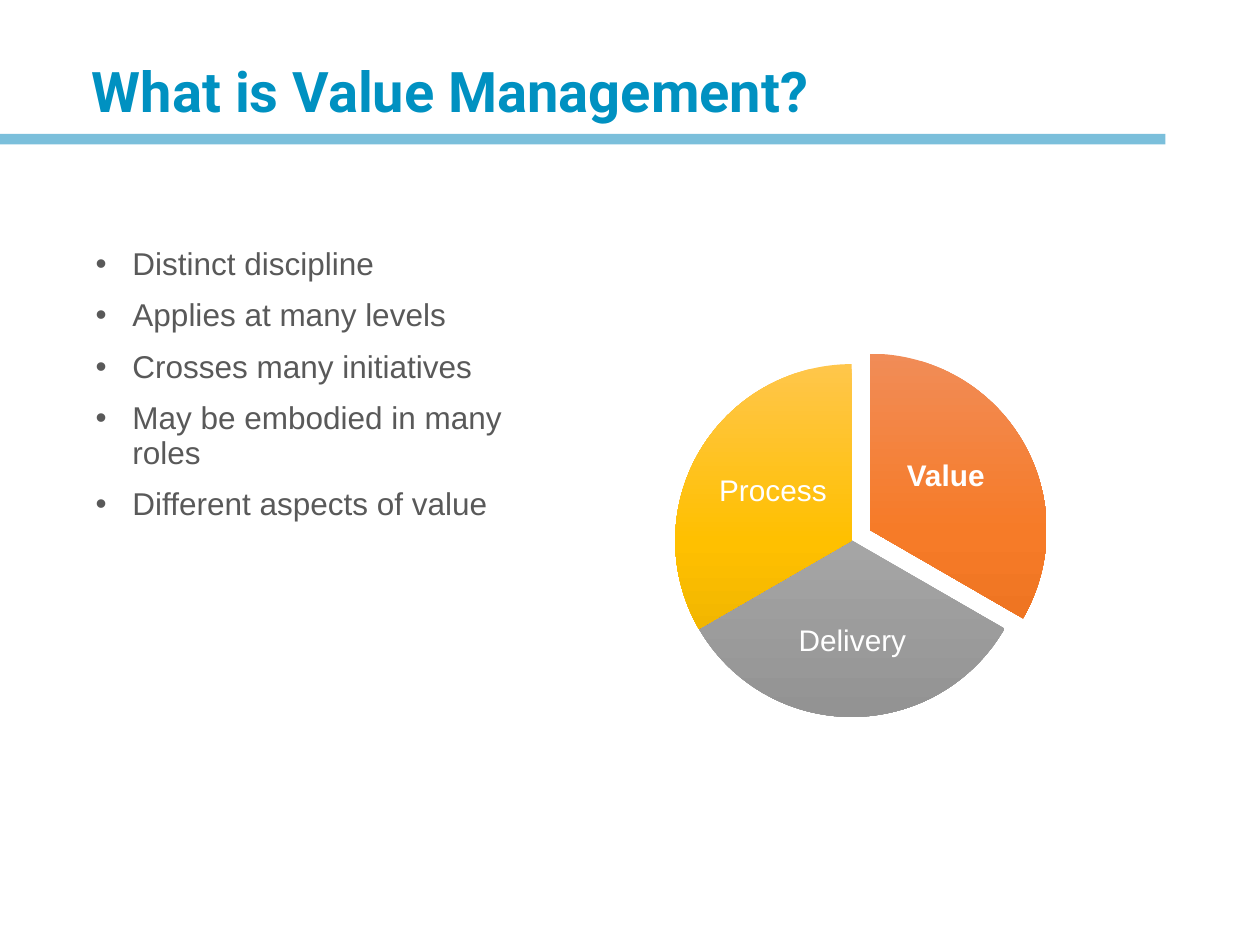
from copy import deepcopy

from pptx import Presentation
from pptx.dml.color import RGBColor as RGB
from pptx.enum.shapes import MSO_SHAPE as SHAPE
from pptx.enum.text import MSO_ANCHOR as ANCHOR, MSO_AUTO_SIZE as FIT, PP_ALIGN as ALIGN
from pptx.oxml.ns import qn
from pptx.util import Pt

BLUE = RGB(0x00, 0x91, 0xC1)
SKY = RGB(0x7B, 0xBF, 0xDB)
GRAY = RGB(0x59, 0x59, 0x59)
WHITE = RGB(0xFF, 0xFF, 0xFF)
ORANGES = RGB(0xF1, 0x8C, 0x57), RGB(0xF6, 0x7B, 0x28), RGB(0xE5, 0x6C, 0x19)
GRAYS = RGB(0xAF, 0xAF, 0xAF), RGB(0xA5, 0xA5, 0xA5), RGB(0x93, 0x93, 0x93)
GOLDS = RGB(0xFF, 0xC6, 0x4B), RGB(0xFF, 0xC0, 0x00), RGB(0xE3, 0xAB, 0x00)

TITLE = "What is Value Management?"
POINTS = [
    "Distinct discipline",
    "Applies at many levels",
    "Crosses many initiatives",
    "May be embodied in many roles",
    "Different aspects of value",
]
# name, colours, shift from the pie's corner, label box, bold
SLICES = [
    ("Value", ORANGES, (10.6, -6), (506.2, 239, 68.4, 67), True),
    ("Delivery", GRAYS, (0, 0), (441.4, 335.5, 91.4, 62.6), False),
    ("Process", GOLDS, (0, 0), (407.5, 247.7, 68.4, 67), False),
]
PIE_X, PIE_Y, PIE_D = 385.9, 208.1, 201.6
START, SWEEP = 270, 360 / len(SLICES)
UNIT = 0.6  # one degree in the pie's adjustment scale
INDENT = 21


def place(shape, *box):
    shape.left, shape.top, shape.width, shape.height = map(Pt, box)


def style(par, font, size, color, bold=False):
    par.line_spacing = 0.9
    for run in par.runs:
        run.font.name, run.font.size, run.font.bold = font, Pt(size), bold
        run.font.color.rgb = color


def inset(frame, side, end):
    frame.margin_left = frame.margin_right = Pt(side)
    frame.margin_top = frame.margin_bottom = Pt(end)


def plain(shape):
    shape.shadow.inherit = False
    shape.line.fill.background()


def shade(shape, colors):
    """Fill from top to bottom with three evenly spaced colours."""
    fill = shape.fill
    fill.gradient()
    fill.gradient_angle = 270
    stops = shape.element.spPr.find(qn("a:gradFill")).find(qn("a:gsLst"))
    stops.insert(1, deepcopy(stops[0]))
    for i, (stop, color) in enumerate(zip(fill.gradient_stops, colors)):
        stop.position = i / 2
        stop.color.rgb = color


prs = Presentation()
prs.slide_width, prs.slide_height = Pt(720), Pt(540)
slide = prs.slides.add_slide(prs.slide_layouts[1])
shapes = slide.shapes

bar = shapes.add_shape(SHAPE.RECTANGLE, 0, Pt(76.5), Pt(666), Pt(6))
plain(bar)
bar.fill.solid()
bar.fill.fore_color.rgb = SKY

title = shapes.title
place(title, 47.5, 31.7, 618.5, 44.6)
frame = title.text_frame
frame.text = TITLE
frame.auto_size = FIT.NONE
frame.vertical_anchor = ANCHOR.MIDDLE
inset(frame, 5, 2.9)
head = frame.paragraphs[0]
head.alignment = ALIGN.LEFT
style(head, "Roboto", 32, BLUE, True)

body = slide.placeholders[1]
place(body, 47.5, 138.2, 270, 156.2)
frame = body.text_frame
frame.text = "\n".join(POINTS)
frame.auto_size = FIT.NONE
for par in frame.paragraphs:
    style(par, "Arial", 18, GRAY)
    par.space_before = Pt(10)
    props = par._p.get_or_add_pPr()
    props.set("marL", str(Pt(INDENT)))
    props.set("indent", str(-Pt(INDENT)))

for i, (name, colors, (dx, dy), box, bold) in enumerate(SLICES):
    pie = shapes.add_shape(SHAPE.PIE, 0, 0, 0, 0)
    place(pie, PIE_X + dx, PIE_Y + dy, PIE_D, PIE_D)
    for k in range(2):
        pie.adjustments[k] = (START + (i + k) * SWEEP) % 360 * UNIT
    plain(pie)
    shade(pie, colors)

    label = shapes.add_textbox(*map(Pt, box))
    frame = label.text_frame
    frame.text = name
    frame.word_wrap = True
    frame.vertical_anchor = ANCHOR.MIDDLE
    inset(frame, 1.5, 1.5)
    par = frame.paragraphs[0]
    par.alignment = ALIGN.CENTER
    style(par, "Arial", 17, WHITE, bold)

prs.save("out.pptx")
